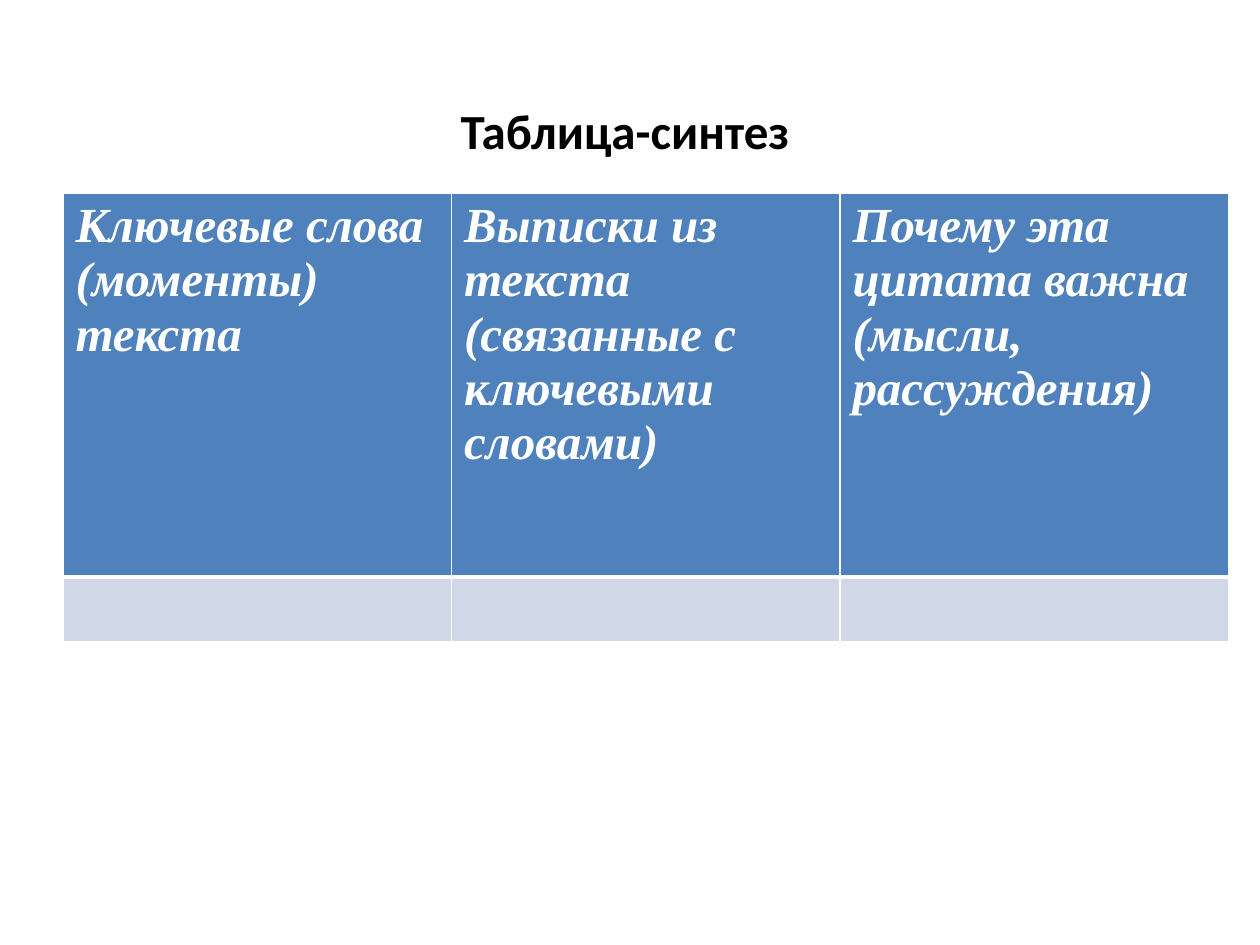
from dataclasses import dataclass

from lxml import etree
from pptx import Presentation
from pptx import util as u
from pptx.dml.color import RGBColor
from pptx.enum import text
from pptx.oxml import ns


@dataclass(frozen=True)
class Theme:
    ink: str = "000000"
    white: str = "FFFFFF"
    head: str = "4F81BD"
    body: str = "D0D8E8"
    sans: str = "Calibri"
    serif: str = "Times New Roman"
    size: int = 28
    thin: int = 1
    thick: int = 3


@dataclass(frozen=True)
class Cell:
    words: str
    fill: str
    top: int
    base: int


THEME = Theme()
HEADS = (
    "Ключевые слова (моменты) текста",
    "Выписки из текста (связанные с ключевыми словами)",
    "Почему эта цитата важна (мысли, рассуждения)",
)
ROWS = (
    [Cell(head, THEME.head, THEME.thin, THEME.thick) for head in HEADS],
    [Cell("", THEME.body, THEME.thick, THEME.thin) for _ in HEADS],
)
TALL = (3.05, 0.51)


def add_run(para, words: str, face: str, color: str, slant: bool = False) -> None:
    run = para.add_run()
    run.text = words
    font = run.font
    font.name, font.size = face, u.Pt(THEME.size)
    font.bold, font.italic = True, slant
    font.color.rgb = RGBColor.from_string(color)


def add_edge(cell, side: str, width: int) -> None:
    line = etree.SubElement(
        cell._tc.get_or_add_tcPr(), ns.qn(f"a:ln{side}"), w=str(u.Pt(width))
    )
    fill = etree.SubElement(line, ns.qn("a:solidFill"))
    etree.SubElement(fill, ns.qn("a:srgbClr"), val=THEME.white)


def draw_cell(cell, item: Cell) -> None:
    edges = {"L": THEME.thin, "R": THEME.thin, "T": item.top, "B": item.base}
    for side, width in edges.items():
        add_edge(cell, side, width)
    cell.fill.solid()
    cell.fill.fore_color.rgb = RGBColor.from_string(item.fill)
    if item.words:
        para = cell.text_frame.paragraphs[0]
        add_run(para, item.words, THEME.serif, THEME.white, True)


def draw_title(slide) -> None:
    box = slide.shapes.add_textbox(
        u.Inches(0.67), u.Inches(0.75), u.Inches(8.58), u.Inches(0.57)
    )
    frame = box.text_frame
    frame.word_wrap = True
    frame.auto_size = text.MSO_AUTO_SIZE.SHAPE_TO_FIT_TEXT
    para = frame.paragraphs[0]
    para.alignment = text.PP_ALIGN.CENTER
    add_run(para, "Таблица-синтез", THEME.sans, THEME.ink)


def draw_table(slide) -> None:
    table = slide.shapes.add_table(
        len(ROWS), len(HEADS),
        u.Inches(0.5), u.Inches(1.53), u.Inches(9.25), u.Inches(sum(TALL)),
    ).table
    for row, tall, items in zip(table.rows, TALL, ROWS):
        row.height = u.Inches(tall)
        for cell, item in zip(row.cells, items):
            draw_cell(cell, item)


def main() -> None:
    deck = Presentation()
    deck.slide_width, deck.slide_height = u.Inches(10), u.Inches(7.5)
    slide = deck.slides.add_slide(deck.slide_layouts[6])
    draw_title(slide)
    draw_table(slide)
    deck.save("out.pptx")


if __name__ == "__main__":
    main()
